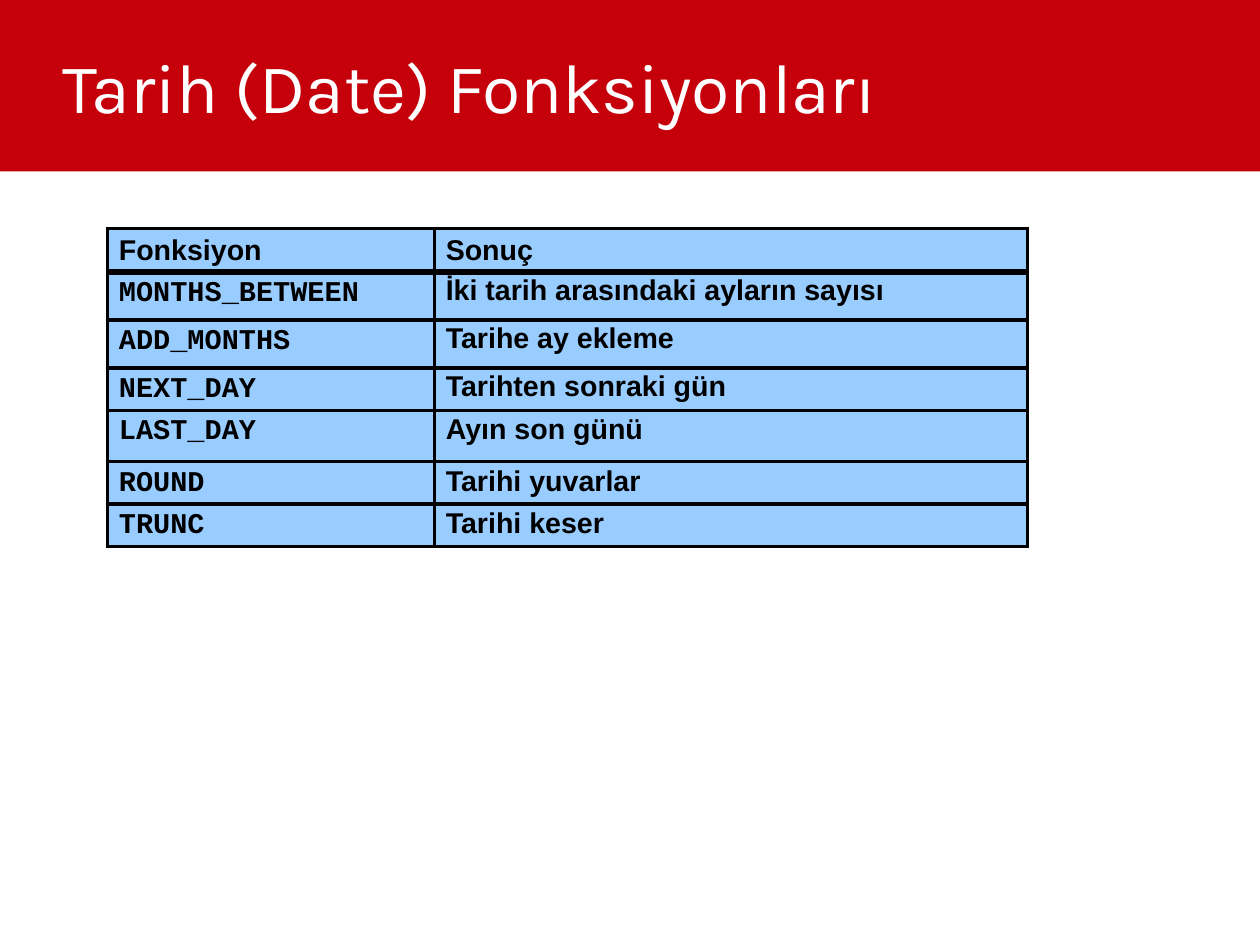
from dataclasses import dataclass

from pptx import Presentation, util as u
from pptx.dml.color import RGBColor
from pptx.enum import shapes, text
from pptx.oxml import parse_xml
from pptx.oxml.ns import nsdecls, qn


@dataclass(frozen=True)
class Theme:
    """Colours, fonts and sizes of the slide."""
    band: str = "C5000B"
    heading: str = "FFFFFF"
    cell: str = "99CCFF"
    ink: str = "000000"
    heading_font: str = "Karla"
    body_font: str = "Arial"
    code_font: str = "Courier New"
    heading_size: float = 44
    body_size: float = 18
    rule: float = 2.25
    header_rule: float = 4.5


THEME = Theme()
CM_PER_INCH = 2.54
PAGE_WIDTH, PAGE_HEIGHT = 28 / CM_PER_INCH, 21 / CM_PER_INCH
HEADER = ("Fonksiyon", "Sonuç")
FUNCTIONS = [
    ("MONTHS_BETWEEN", "İki tarih arasındaki ayların sayısı", 0.42, (0.9, 35), (0.9, 0)),
    ("ADD_MONTHS", "Tarihe ay ekleme", 0.42, (0.9, 35), (0.9, 0)),
    ("NEXT_DAY", "Tarihten sonraki gün", 0.34, (0.95, 35), (0.9, 0)),
    ("LAST_DAY", "Ayın son günü", 0.45, (0.9, 35), (0.9, 0)),
    ("ROUND\t", "Tarihi yuvarlar", 0.34, (0.95, 35), (0.95, 35)),
    ("TRUNC", "Tarihi keser", 0.34, (0.95, 35), (0.95, 35)),
]


def style_font(font, name, size, color, bold=False):
    """Set the face, size, colour and weight of a font."""
    font.name, font.size, font.bold = name, u.Pt(size), bold
    font.color.rgb = RGBColor.from_string(color)


def space_paragraph(paragraph, line_spacing, percent_before):
    """Set line spacing and a relative space before the paragraph."""
    paragraph.line_spacing = line_spacing
    paragraph.space_before = u.Pt(0)
    if percent_before:
        before = paragraph._p.pPr.find(qn("a:spcBef"))
        before.clear()
        before.append(parse_xml(
            f'<a:spcPct {nsdecls("a")} val="{percent_before * 1000}"/>'))


def border_cell(cell, top, bottom):
    """Draw the four borders of a cell with the given top and bottom weights."""
    weights = {"lnL": THEME.rule, "lnR": THEME.rule, "lnT": top, "lnB": bottom}
    properties = cell._tc.get_or_add_tcPr()
    for side, weight in weights.items():
        properties.append(parse_xml(
            f'<a:{side} {nsdecls("a")} w="{u.Pt(weight)}"><a:solidFill>'
            f'<a:srgbClr val="{THEME.ink}"/></a:solidFill></a:{side}>'))


def fill_cell(cell, words, font_name, spacing, top, bottom):
    """Write one table cell with its borders and fill."""
    border_cell(cell, top, bottom)
    cell.fill.solid()
    cell.fill.fore_color.rgb = RGBColor.from_string(THEME.cell)
    cell.text = words
    paragraph = cell.text_frame.paragraphs[0]
    space_paragraph(paragraph, *spacing)
    style_font(paragraph.font, font_name, THEME.body_size, THEME.ink, True)


def add_heading(slide, left, top, width, height):
    """Place the coloured band and the title inside it."""
    band = slide.shapes.add_shape(shapes.MSO_SHAPE.RECTANGLE, u.Inches(left),
                                  u.Inches(top), u.Inches(width), u.Inches(height))
    band.shadow.inherit = False
    band.fill.solid()
    band.fill.fore_color.rgb = RGBColor.from_string(THEME.band)
    band.line.fill.background()

    title = slide.shapes.title
    title._element.addprevious(band._element)
    indent, inset = 0.55, 0.06
    title.left, title.top = u.Inches(left + indent), u.Inches(top + inset)
    title.width, title.height = u.Inches(width - indent), u.Inches(height - 2 * inset)
    frame = title.text_frame
    frame.text = "Tarih (Date) Fonksiyonları"
    frame.margin_left = frame.margin_right = frame.margin_top = frame.margin_bottom = 0
    frame.vertical_anchor = text.MSO_ANCHOR.MIDDLE
    frame.auto_size = text.MSO_AUTO_SIZE.NONE
    paragraph = frame.paragraphs[0]
    paragraph.alignment = text.PP_ALIGN.LEFT
    style_font(paragraph.font, THEME.heading_font, THEME.heading_size, THEME.heading)


def add_functions(slide, left, top, width, height):
    """Place the table of date functions and their results."""
    functions = slide.shapes.add_table(
        len(FUNCTIONS) + 1, len(HEADER), u.Inches(left), u.Inches(top),
        u.Inches(width), u.Inches(height)).table
    name_width = 2.86
    functions.columns[0].width = u.Inches(name_width)
    functions.columns[1].width = u.Inches(width - name_width)

    functions.rows[0].height = u.Inches(0.34)
    for column, label in enumerate(HEADER):
        fill_cell(functions.cell(0, column), label, THEME.body_font, (1.0, 20),
                  THEME.rule, THEME.header_rule)

    for row, (name, result, row_height, name_spacing, result_spacing) in enumerate(FUNCTIONS, 1):
        functions.rows[row].height = u.Inches(row_height)
        above = THEME.header_rule if row == 1 else THEME.rule
        fill_cell(functions.cell(row, 0), name, THEME.code_font, name_spacing,
                  above, THEME.rule)
        fill_cell(functions.cell(row, 1), result, THEME.body_font, result_spacing,
                  above, THEME.rule)


def main():
    """Build and save the slide."""
    deck = Presentation()
    deck.slide_width, deck.slide_height = u.Inches(PAGE_WIDTH), u.Inches(PAGE_HEIGHT)
    slide = deck.slides.add_slide(deck.slide_layouts.get_by_name("Title Only"))
    add_heading(slide, 0, 0, PAGE_WIDTH, 1.5)
    add_functions(slide, 0.94, 2, 8.05, 2.84)
    deck.save("out.pptx")


if __name__ == "__main__":
    main()
